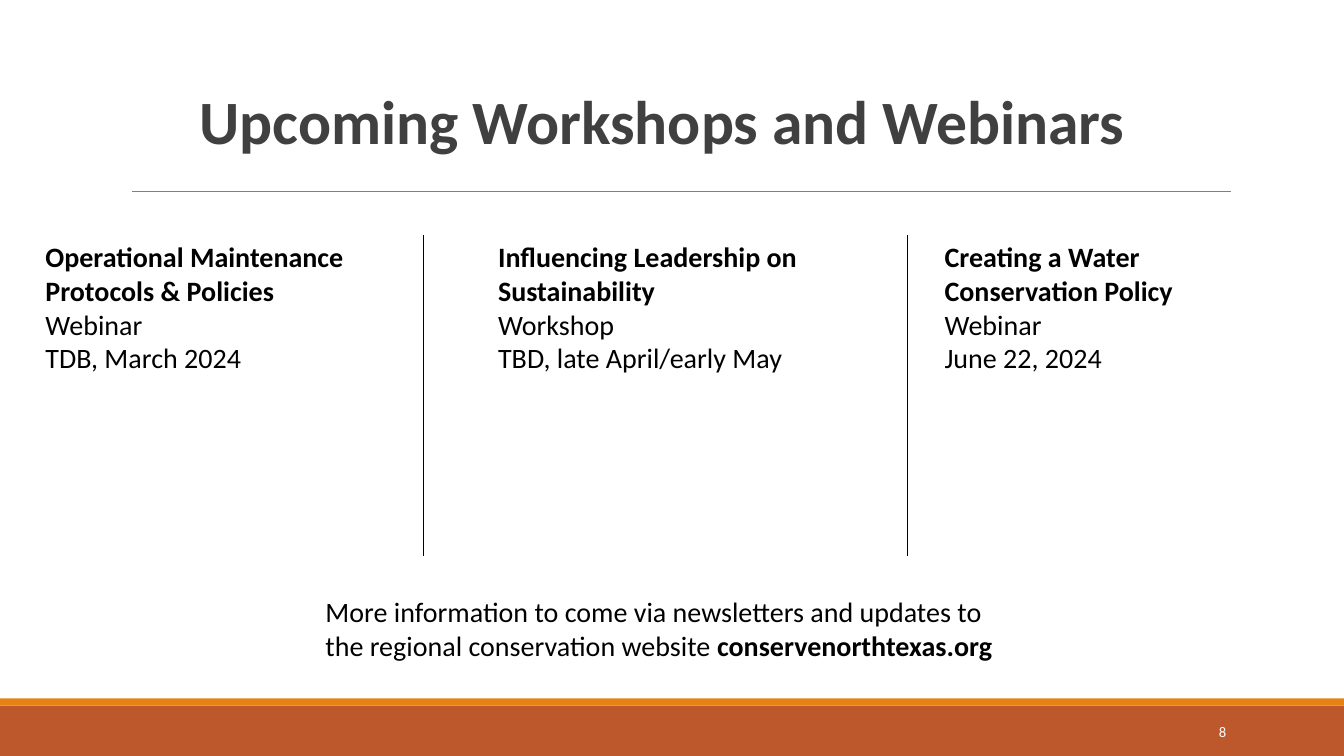
from dataclasses import dataclass

from pptx import Presentation
from pptx.dml.color import RGBColor
from pptx.enum.shapes import MSO_CONNECTOR, MSO_SHAPE
from pptx.enum.text import MSO_ANCHOR, PP_ALIGN
from pptx.oxml.ns import qn
from pptx.util import Inches, Pt
from lxml import etree

RECT = MSO_SHAPE.RECTANGLE
STRAIGHT = MSO_CONNECTOR.STRAIGHT
LEFT, CENTER, RIGHT = PP_ALIGN.LEFT, PP_ALIGN.CENTER, PP_ALIGN.RIGHT
TOP, MIDDLE = MSO_ANCHOR.TOP, MSO_ANCHOR.MIDDLE


@dataclass(frozen=True)
class Theme:
    font: str = "Calibri"
    title: RGBColor = RGBColor(0x40, 0x40, 0x40)
    text: RGBColor = RGBColor(0, 0, 0)
    number: RGBColor = RGBColor(0xFF, 0xFF, 0xFF)
    rule: RGBColor = RGBColor(0x80, 0x80, 0x80)
    band: RGBColor = RGBColor(0xBD, 0x58, 0x2C)
    accent: RGBColor = RGBColor(0xE4, 0x83, 0x12)
    title_size: float = 44
    body_size: float = 20
    number_size: float = 10.5


theme = Theme()

prs = Presentation()
prs.slide_width, prs.slide_height = Inches(13.33), Inches(7.5)
s = prs.slides.add_slide(prs.slide_layouts[6])


def add_text(box, paragraphs, size, color, align=LEFT, anchor=TOP, side=0.1):
    """Add a text box; each paragraph is a list of (text, bold) runs."""
    tf = s.shapes.add_textbox(*map(Inches, box)).text_frame
    tf.word_wrap = True
    tf.vertical_anchor = anchor
    tf.margin_left = tf.margin_right = Inches(side)
    for i, runs in enumerate(paragraphs):
        p = tf.add_paragraph() if i else tf.paragraphs[0]
        p.alignment = align
        p.font.name, p.font.size = theme.font, Pt(size)
        p.font.color.rgb = color
        for text, bold in runs:
            r = p.add_run()
            r.text = text
            r.font.bold = bold


# Footer bands
for top, height, color in [(7, 0.5, theme.band), (6.93, 0.07, theme.accent)]:
    sp = s.shapes.add_shape(RECT, 0, Inches(top), prs.slide_width, Inches(height))
    sp.shadow.inherit = False
    sp.fill.solid()
    sp.fill.fore_color.rgb = color
    sp.line.fill.background()

# Title rule and column dividers
for x1, y1, x2, y2, color, width in [
    (1.31, 1.9, 12.21, 1.9, theme.rule, 0.5),
    (4.2, 2.33, 4.2, 5.52, theme.text, 1),
    (9, 2.33, 9, 5.52, theme.text, 1),
]:
    line = s.shapes.add_connector(STRAIGHT, *map(Inches, (x1, y1, x2, y2)))
    line.line.color.rgb = color
    line.line.width = Pt(width)
    etree.SubElement(line._element.spPr, qn("a:effectLst"))

add_text((0.45, 0.77, 12.25, 0.84), [[("Upcoming Workshops and Webinars", True)]],
         theme.title_size, theme.title, CENTER)

# Event columns
events = [
    (0.45, 4.4, 0, "Operational Maintenance Protocols & Policies", "Webinar", "TDB, March 2024"),
    (4.94, 4.4, 0, "Influencing Leadership on Sustainability", "Workshop", "TBD, late April/early May"),
    (9.27, 1.45, 0.1, "Creating a Water Conservation Policy", "Webinar", "June 22, 2024"),
]
for left, height, side, name, kind, date in events:
    add_text((left, 2.33, 3.42, height), [[(name, True)], [(kind, False)], [(date, False)]],
             theme.body_size, theme.text, side=side)

add_text((3.13, 5.85, 7.07, 1.11),
         [[("More information to come via newsletters and updates to "
            "the regional conservation website ", False),
           ("conservenorthtexas.org", True)]],
         theme.body_size, theme.text)

add_text((10.83, 7.06, 1.43, 0.4), [[("8", False)]],
         theme.number_size, theme.number, RIGHT, MIDDLE)

prs.save("out.pptx")
